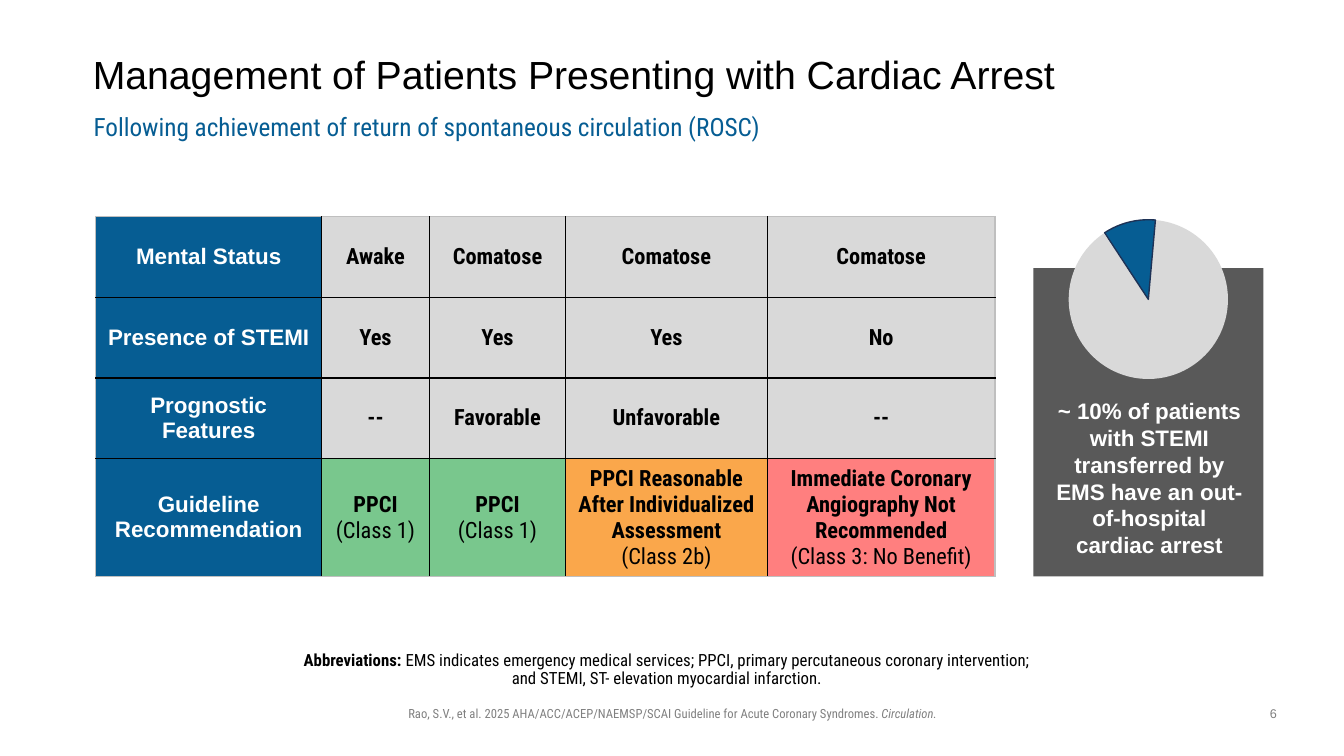
import pptx
import pptx.util
import pptx.enum.shapes
import pptx.enum.text
import pptx.dml.color
import pptx.oxml
import pptx.oxml.ns

Inches, Pt = pptx.util.Inches, pptx.util.Pt
ALIGN = pptx.enum.text.PP_ALIGN
ANCHOR = pptx.enum.text.MSO_ANCHOR
SHAPE = pptx.enum.shapes.MSO_SHAPE
RGB = pptx.dml.color.RGBColor.from_string
BODY = "Roboto Condensed"
HEX = {"black": "000000", "white": "FFFFFF", "blue": "065D93", "navy": "1E3256",
       "light": "D9D9D9", "edge": "BFBFBF", "dark": "595959", "gray": "808080",
       "green": "79C78D", "orange": "FAA74B", "red": "FF7F7F"}


def style(run, size, face, color, bold=False):
    run.font.size = Pt(size)
    run.font.name = face
    run.font.color.rgb = RGB(HEX[color])
    run.font.bold = bold


def label(box, text, size, face, color, bold=False, align=ALIGN.CENTER):
    area = slide.shapes.add_textbox(*map(Inches, box)).text_frame
    area.word_wrap = True
    area.text = text
    par = area.paragraphs[0]
    par.alignment = align
    style(par.runs[0], size, face, color, bold)
    return par


deck = pptx.Presentation()
deck.slide_width, deck.slide_height = Inches(13.33), Inches(7.5)
slide = deck.slides.add_slide(deck.slide_layouts[1])
title, notes = slide.placeholders

for item, box, anchor in ((title, (0.92, 0.4, 11.5, 0.72), ANCHOR.MIDDLE),
                          (notes, (1.88, 6.42, 9.57, 0.46), ANCHOR.BOTTOM)):
    item.left, item.top, item.width, item.height = map(Inches, box)
    item.text_frame.auto_size = pptx.enum.text.MSO_AUTO_SIZE.NONE
    item.text_frame.vertical_anchor = anchor
    item.text_frame.margin_left = 0

frame = title.text_frame
frame.margin_top = frame.margin_right = frame.margin_bottom = 0
frame.text = "Management of Patients Presenting with Cardiac Arrest"
par = frame.paragraphs[0]
par.alignment = ALIGN.LEFT
par.line_spacing = 0.9
style(par.runs[0], 28, "Arial", "black")

par = notes.text_frame.paragraphs[0]
props = par._p.get_or_add_pPr()
props.set("marL", "0")
props.set("indent", "0")
props.append(pptx.oxml.parse_xml(f'<a:buNone {pptx.oxml.ns.nsdecls("a")}/>'))
par.alignment = ALIGN.CENTER
par.line_spacing = 0.9
par.space_before = Pt(0)
par.text = ("Abbreviations: ")
par.add_run().text = ("EMS indicates emergency medical services; PPCI, primary "
                      "percutaneous coronary intervention;")
par.add_line_break()
par.add_run().text = "and STEMI, ST- elevation myocardial infarction."
for spot, run in enumerate(par.runs):
    style(run, 12, BODY, "black", spot == 0)

label((0.83, 1.06, 11.39, 0.4),
      "Following achievement of return of spontaneous circulation (ROSC)",
      18, BODY, "blue", align=ALIGN.LEFT)

rows = [
    ["Mental Status", "Awake", "Comatose", "Comatose", "Comatose"],
    ["Presence of STEMI", "Yes", "Yes", "Yes", "No"],
    ["Prognostic Features", "--", "Favorable", "Unfavorable", "--"],
    ["Guideline Recommendation", "PPCI\n(Class 1)", "PPCI\n(Class 1)",
     "PPCI Reasonable\nAfter Individualized Assessment\n(Class 2b)",
     "Immediate Coronary Angiography Not Recommended\n(Class 3: No Benefit)"],
]
wides = [2.24, 1.07, 1.35, 2, 2.26]
highs = [0.8, 0.8, 0.8, 1.17]
last = ["blue", "green", "green", "orange", "red"]
table = slide.shapes.add_table(4, 5, Inches(0.95), Inches(2.15),
                               Inches(sum(wides)), Inches(sum(highs))).table
table.first_row = table.horz_banding = False
for col, wide in zip(table.columns, wides):
    col.width = Inches(wide)
for r, (texts, high) in enumerate(zip(rows, highs)):
    table.rows[r].height = Inches(high)
    for c, text in enumerate(texts):
        cell = table.cell(r, c)
        cell.vertical_anchor = ANCHOR.MIDDLE
        outer = {"L": c == 0, "R": c == 4, "T": r == 0, "B": r == 3}
        for side, rim in outer.items():
            tone = HEX["edge" if rim else "black"]
            cell._tc.get_or_add_tcPr().append(pptx.oxml.parse_xml(
                f'<a:ln{side} {pptx.oxml.ns.nsdecls("a")} w="12700"><a:solidFill>'
                f'<a:srgbClr val="{tone}"/></a:solidFill></a:ln{side}>'))
        cell.fill.solid()
        fill = last[c] if r == 3 else "light" if c else "blue"
        cell.fill.fore_color.rgb = RGB(HEX[fill])
        cell.text_frame.text = text
        face, color = (BODY, "black") if c else ("Arial", "white")
        for par in cell.text_frame.paragraphs:
            par.alignment = ALIGN.CENTER
            style(par.runs[0], 16, face, color, not par.text.startswith("("))

panel = slide.shapes.add_shape(SHAPE.RECTANGLE, Inches(10.25), Inches(2.66),
                               Inches(2.28), Inches(3.06))
panel.shadow.inherit = False
panel.fill.solid()
panel.fill.fore_color.rgb = RGB(HEX["dark"])
panel.line.fill.background()

group = slide.shapes.add_group_shape()
for turn, start, end, color in ((333.1, 180.76, 157.69, "light"),
                                (354.1, 145.57, 168.59, "blue")):
    pie = group.shapes.add_shape(SHAPE.PIE, Inches(10.6), Inches(2.18),
                                 Inches(1.58), Inches(1.58))
    pie.adjustments[0], pie.adjustments[1] = start, end
    pie.rotation = turn
    pie.shadow.inherit = False
    pie.fill.solid()
    pie.fill.fore_color.rgb = RGB(HEX[color])
    pie.line.fill.background()
pie.line.color.rgb = RGB(HEX["navy"])
pie.line.width = Pt(1)

label((10.36, 3.89, 2.08, 1.72),
      "~ 10% of patients with STEMI transferred by EMS have an "
      "out-of-hospital cardiac arrest", 16, "Arial", "white", True)

cite = label((2.36, 6.95, 8.62, 0.25),
             "Rao, S.V., et al. 2025 AHA/ACC/ACEP/NAEMSP/SCAI Guideline for "
             "Acute Coronary Syndromes. ", 9, BODY, "gray")
run = cite.add_run()
run.text = "Circulation."
style(run, 9, BODY, "gray")
run.font.italic = True
label((12.42, 6.95, 0.42, 0.26), "6", 9, "Arial", "gray")

deck.save("out.pptx")
